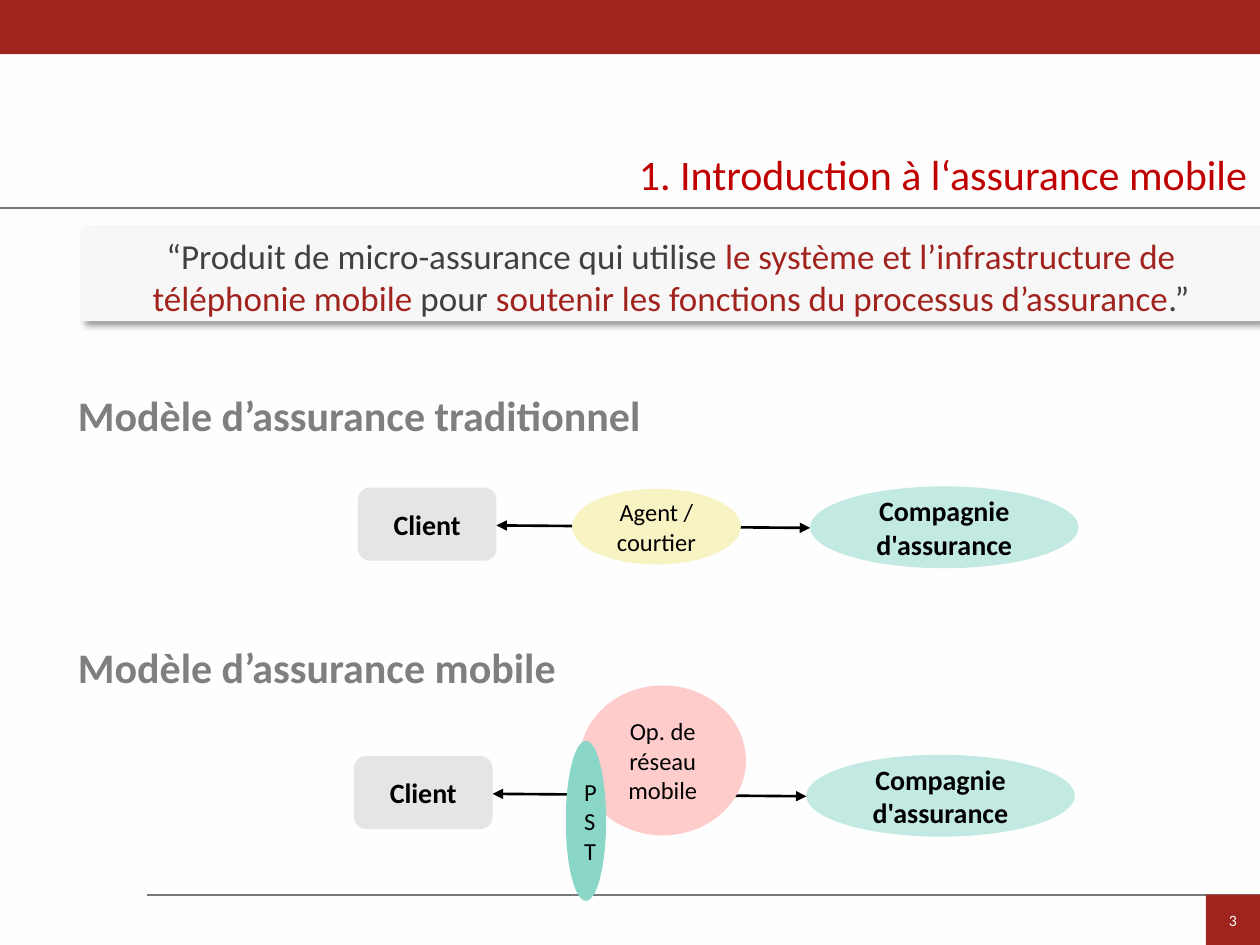
from lxml.etree import SubElement
from pptx import Presentation
from pptx.dml.color import RGBColor
from pptx.enum.shapes import MSO_CONNECTOR, MSO_SHAPE
from pptx.enum.text import MSO_ANCHOR, PP_ALIGN
from pptx.oxml.ns import qn
from pptx.util import Inches, Pt

THEME = {
    "font": "Calibri",
    "background": "FEFEFE", "rule": "777978", "band": "A0241E",
    "title": "C00000", "heading": "7F7F7F", "body": "404040",
    "accent": "A0231E", "quote": "F7F7F7", "black": "000000",
    "client": "E5E5E5", "insurer": "C2EAE2", "agent": "F7F3C3",
    "operator": "FFCCCC", "platform": "8AD6C7",
    "title size": 24, "quote size": 20, "strong size": 16,
    "label size": 14, "number size": 9,
}

TITLE = "1. Introduction à l‘assurance mobile"
PAGE_NUMBER = "3"
QUOTE = [
    ("“Produit de micro-assurance qui utilise ", "body"),
    ("le système et l’infrastructure de téléphonie mobile", "accent"),
    (" pour ", "body"),
    ("soutenir les fonctions du processus d’assurance", "accent"),
    (".”", "body"),
]
MODELS = [
    {"heading": "Modèle d’assurance traditionnel", "top": 3.04, "left": 2.84,
     "middlemen": [("Agent / courtier", "agent", (4.54, 3.88, 1.34, 0.6), False)]},
    {"heading": "Modèle d’assurance mobile", "top": 5.04, "left": 2.81,
     "flow top": 5.99,
     "middlemen": [("Op. de réseau mobile", "operator", (4.6, 5.44, 1.32, 1.19), False),
                   ("PST", "platform", (4.49, 5.88, 0.32, 1.27), True)]},
]
FLOW_TOP = 3.86
CLIENT_WIDTH, INSURER_OFFSET = 1.1, 3.59


def color(name):
    return RGBColor.from_string(THEME[name])


def write(frame, spans, size, align=PP_ALIGN.CENTER, anchor=MSO_ANCHOR.MIDDLE, bold=False):
    frame.word_wrap = True
    frame.vertical_anchor = anchor
    paragraph = frame.paragraphs[0]
    paragraph.alignment = align
    values = {"name": THEME["font"], "size": Pt(THEME[size]), "bold": bold}
    for text, ink in spans:
        span = paragraph.add_run()
        span.text = text
        for name, value in values.items():
            setattr(span.font, name, value)
        span.font.color.rgb = color(ink)
    return paragraph


def add_box(page, kind, place, fill):
    box = page.shapes.add_shape(kind, *map(Inches, place))
    box.shadow.inherit = False
    box.fill.solid()
    box.fill.fore_color.rgb = color(fill)
    box.line.fill.background()
    return box


def add_line(page, start, end, ink, width, arrows=False):
    line = page.shapes.add_connector(MSO_CONNECTOR.STRAIGHT, *map(Inches, start + end))
    line.line.color.rgb = color(ink)
    line.line.width = Pt(width)
    if arrows:
        stroke = line.line._get_or_add_ln()
        for tag in ("a:headEnd", "a:tailEnd"):
            SubElement(stroke, qn(tag), type="triangle")
    SubElement(line._element.spPr, qn("a:effectLst"))


def add_shadow(box):
    effects = box._element.spPr.find(qn("a:effectLst"))
    shadow = SubElement(effects, qn("a:outerShdw"), blurRad=str(Pt(4)), dist=str(Pt(3)),
                        dir=str(45 * 60000), algn="tl", rotWithShape="0")
    ink = SubElement(shadow, qn("a:srgbClr"), val=THEME["black"])
    SubElement(ink, qn("a:alpha"), val="40000")


def add_heading(page, text, top):
    box = page.shapes.add_textbox(*map(Inches, (0.52, top, 9.3, 0.5)))
    paragraph = write(box.text_frame, [(text, "heading")], "title size",
                      PP_ALIGN.LEFT, MSO_ANCHOR.TOP, True)
    paragraph.space_after = Pt(10)


def add_model(page, model):
    add_heading(page, model["heading"], model["top"])
    left, top = model["left"], model.get("flow top", FLOW_TOP)
    insurer_left = left + INSURER_OFFSET
    insurer = add_box(page, MSO_SHAPE.OVAL, (insurer_left, top, 2.13, 0.65), "insurer")
    write(insurer.text_frame, [("Compagnie d'assurance", "black")], "strong size", bold=True)
    add_line(page, (left + CLIENT_WIDTH, top + 0.31), (insurer_left, top + 0.33),
             "black", 1.5, True)
    client = add_box(page, MSO_SHAPE.ROUNDED_RECTANGLE,
                     (left, top + 0.01, CLIENT_WIDTH, 0.58), "client")
    write(client.text_frame, [("Client", "black")], "strong size", bold=True)
    for label, fill, place, stacked in model["middlemen"]:
        box = add_box(page, MSO_SHAPE.OVAL, place, fill)
        write(box.text_frame, [(label, "black")], "label size")
        if stacked:
            box.text_frame._txBody.bodyPr.set("vert", "wordArtVert")


def main():
    deck = Presentation()
    deck.slide_width, deck.slide_height = Inches(10), Inches(7.5)
    page = deck.slides.add_slide(deck.slide_layouts[5])
    page.background.fill.solid()
    page.background.fill.fore_color.rgb = color("background")

    add_line(page, (1.17, 7.1), (10, 7.1), "rule", 1.25)
    add_line(page, (0, 1.65), (10, 1.65), "rule", 1.25)
    add_box(page, MSO_SHAPE.RECTANGLE, (0, 0, 10, 0.43), "band")

    title = page.shapes.title
    for name, value in zip(("left", "top", "width", "height"), (4.44, 1.13, 5.56, 0.5)):
        setattr(title, name, Inches(value))
    write(title.text_frame, [(TITLE, "title")], "title size", PP_ALIGN.RIGHT, MSO_ANCHOR.TOP)

    number = add_box(page, MSO_SHAPE.RECTANGLE, (9.57, 7.1, 0.43, 0.4), "band")
    write(number.text_frame, [(PAGE_NUMBER, "background")], "number size")

    for model in MODELS:
        add_model(page, model)

    quote = add_box(page, MSO_SHAPE.RECTANGLE, (0.65, 1.81, 9.35, 0.74), "quote")
    add_shadow(quote)
    write(quote.text_frame, QUOTE, "quote size", anchor=MSO_ANCHOR.TOP)

    deck.save("out.pptx")


if __name__ == "__main__":
    main()
